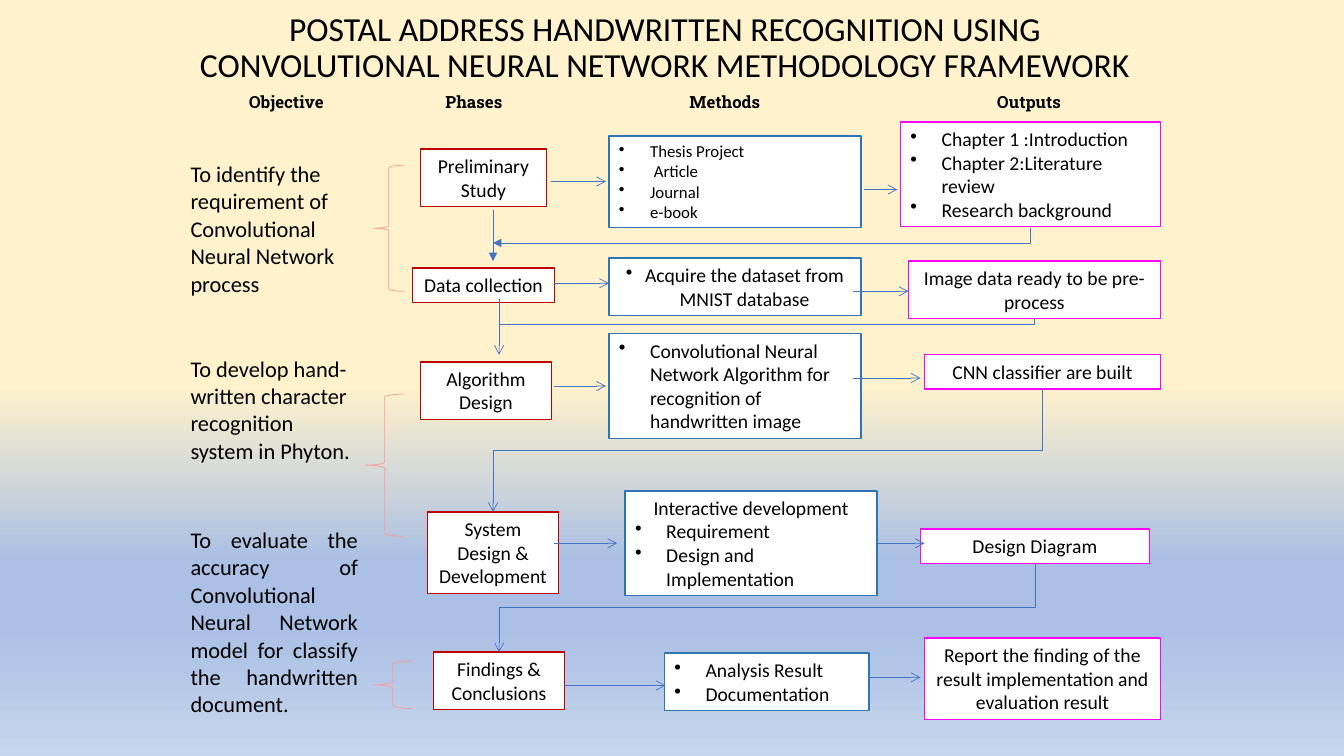
import pptx
import pptx.util
import pptx.dml.color
import pptx.enum.dml
import pptx.enum.shapes
import pptx.enum.text
import pptx.oxml
import pptx.oxml.ns

theme = {
    "ink": "000000", "paper": "FFFFFF", "phase": "C00000", "method": "2E75B6",
    "output": "FF00FF", "line": "4472C4", "brace": "FF9999",
    "sky": [(51, "FFF2CC"), (74, "ABC0E4"), (83, "ABC0E4"), (100, "C7D5ED")],
    "body": "Calibri", "slab": "Roboto Slab",
    "title": 24, "aim": 16, "card": 14, "small": 12, "edge": 1, "thin": 0.5,
}
unit = pptx.util.Inches(0.01)
wide, high = 1333, 750
rgb = pptx.dml.color.RGBColor.from_string
qn = pptx.oxml.ns.qn
side = pptx.enum.text.PP_ALIGN
kind = pptx.enum.shapes.MSO_SHAPE
link = pptx.enum.shapes.MSO_CONNECTOR


def write(frame, lines, size, align, hang=31, font=theme["body"], bold=False):
    frame.word_wrap = True
    frame.vertical_anchor = pptx.enum.text.MSO_ANCHOR.TOP
    for i, line in enumerate(lines):
        para = frame.paragraphs[0] if i == 0 else frame.add_paragraph()
        para.text = line.removeprefix("•")
        para.alignment = align
        if line.startswith("•"):
            para.alignment = side.LEFT if hang == 31 else align
            prop = para._p.get_or_add_pPr()
            prop.set("marL", str(hang * unit))
            prop.set("indent", str(-hang * unit))
            prop.append(pptx.oxml.parse_xml(
                '<a:buChar xmlns:a="http://schemas.openxmlformats.org/drawingml/2006/main" char="•"/>'))
        for run in para.runs:
            run.font.size = pptx.util.Pt(size)
            run.font.name = font
            run.font.bold = bold
            run.font.color.rgb = rgb(theme["ink"])


def join(form, ends, head):
    wire = slide.shapes.add_connector(form, *[n * unit for n in ends])
    wire.line.color.rgb = rgb(theme["line"])
    wire.line.width = pptx.util.Pt(theme["thin"])
    prop = wire._element.spPr
    if head:
        tail = wire.line._get_or_add_ln().makeelement(qn("a:tailEnd"), {"type": head})
        wire.line._get_or_add_ln().append(tail)
    prop.append(prop.makeelement(qn("a:effectLst"), {}))
    return wire


deck = pptx.Presentation()
deck.slide_width, deck.slide_height = wide * unit, high * unit
slide = deck.slides.add_slide(deck.slide_layouts[6])

back = slide.background.fill
back.gradient()
back.gradient_angle = 270
stops = slide.element.find(".//" + qn("a:gsLst"))
for old in list(stops):
    stops.remove(old)
for share, tint in theme["sky"]:
    stop = stops.makeelement(qn("a:gs"), {"pos": str(share * 1000)})
    stop.append(stop.makeelement(qn("a:srgbClr"), {"val": tint}))
    stops.append(stop)

aims = [
    (215, 74, side.LEFT, "To identify the requirement of Convolutional Neural Network process"),
    (166, 52, side.LEFT, "To develop hand-written character recognition system in Phyton."),
    (250, 56, side.JUSTIFY, "To evaluate the accuracy of Convolutional Neural Network model for classify the handwritten document."),
    (33, 0, side.LEFT, ""),
]
spans = [180, 453, 352]
tall = sum(aim[0] for aim in aims)
grid = slide.shapes.add_table(len(aims), len(spans), 182 * unit, 86 * unit,
                              sum(spans) * unit, tall * unit)
table = grid.table
table.first_row = table.horz_banding = False
style = table._tbl.tblPr.find(qn("a:tableStyleId"))
style.text = "{2D5ABB26-0587-4C30-8999-92F81FD0307C}"
for col, span in zip(table.columns, spans):
    col.width = span * unit
for row, (size, gap, align, text) in zip(table.rows, aims):
    row.height = size * unit
    for cell in row.cells:
        cell.fill.background()
        cell.margin_left = cell.margin_right = 7 * unit
        cell.margin_top = cell.margin_bottom = 0
    if text:
        row.cells[0].margin_top = gap * unit
        write(row.cells[0].text_frame, [text], theme["aim"], align)
for i in (1, 2):
    table.cell(1, i).merge(table.cell(2, i))

for x, w, text in [(237, 124, "Objective"), (432, 124, "Phases"),
                   (674, 110, "Methods"), (979, 110, "Outputs")]:
    label = slide.shapes.add_textbox(x * unit, 86 * unit, w * unit, 30 * unit)
    write(label.text_frame, [text], theme["small"], side.LEFT,
          font=theme["slab"], bold=True)

cards = {
    "phase": [
        (417, 148, 125, 57, ["Preliminary Study"]),
        (409, 266, 141, 34, ["Data collection"]),
        (417, 359, 130, 57, ["Algorithm Design"]),
        (424, 508, 130, 81, ["System Design & Development"]),
        (430, 647, 130, 57, ["Findings & Conclusions"]),
    ],
    "method": [
        (604, 135, 250, 91, ["•Thesis Project", "• Article", "•Journal", "•e-book"]),
        (604, 256, 250, 57, ["•Acquire the dataset from MNIST database"]),
        (604, 331, 250, 104, ["•Convolutional Neural Network Algorithm for recognition of handwritten image"]),
        (620, 487, 250, 104, ["Interactive development", "•Requirement", "•Design and Implementation"]),
        (659, 648, 203, 57, ["•Analysis Result", "•Documentation"]),
    ],
    "output": [
        (893, 121, 258, 104, ["•Chapter 1 :Introduction", "•Chapter 2:Literature review", "•Research background"]),
        (901, 259, 250, 57, ["Image data ready to be pre-process"]),
        (917, 352, 234, 34, ["CNN classifier are built"]),
        (913, 525, 227, 34, ["Design Diagram"]),
        (917, 633, 234, 81, ["Report the finding of the result implementation and evaluation result"]),
    ],
}
for role, group in cards.items():
    for i, (x, y, w, h, lines) in enumerate(group):
        card = slide.shapes.add_shape(kind.RECTANGLE, x * unit, y * unit, w * unit, h * unit)
        card.shadow.inherit = False
        card.fill.solid()
        card.fill.fore_color.rgb = rgb(theme["paper"])
        card.line.color.rgb = rgb(theme[role])
        card.line.width = pptx.util.Pt(theme["edge"])
        size = theme["small"] if (role, i) == ("method", 0) else theme["card"]
        hang = 19 if (role, i) == ("method", 1) else 31
        write(card.text_frame, lines, size, side.CENTER, hang)

for x, end, y in [(547, 601, 180), (857, 890, 188), (549, 604, 281), (846, 901, 289),
                  (549, 601, 383), (846, 913, 375), (549, 612, 539), (870, 917, 539),
                  (559, 660, 680), (862, 913, 672)]:
    join(link.STRAIGHT, (x, y, end, y), "arrow")
for x, y, end, head in [(489, 208, 259, "triangle"), (495, 297, 352, "arrow")]:
    join(link.STRAIGHT, (x, y, x, end), head)

for x, y, left, end, form, head in [
        (1022, 226, 489, 241, "bentConnector2", "triangle"),
        (1026, 316, 495, 322, "bentConnector2", None),
        (1034, 385, 489, 508, "bentConnector3", "arrow"),
        (1027, 559, 495, 647, "bentConnector3", "arrow")]:
    run, drop = x - left, end - y
    midx, midy = (x + left) / 2, (y + end) / 2
    ends = (midx - drop / 2, midy - run / 2, midx + drop / 2, midy + run / 2)
    bend = join(link.ELBOW, [round(n, 1) for n in ends], head)
    bend._element.spPr.find(qn("a:prstGeom")).set("prst", form)
    bend._element.spPr.find(qn("a:xfrm")).set("rot", str(90 * 60000))

for x, y, w, h in [(370, 164, 31, 125), (362, 391, 39, 141), (370, 656, 39, 47)]:
    brace = slide.shapes.add_shape(kind.LEFT_BRACE, x * unit, y * unit, w * unit, h * unit)
    brace.shadow.inherit = False
    brace.fill.background()
    brace.line.color.rgb = rgb(theme["brace"])
    brace.line.width = pptx.util.Pt(theme["thin"])

title = slide.shapes.add_textbox(158 * unit, 7 * unit, 1003 * unit, 65 * unit)
write(title.text_frame, ["POSTAL ADDRESS HANDWRITTEN RECOGNITION USING CONVOLUTIONAL NEURAL NETWORK METHODOLOGY FRAMEWORK"],
      theme["title"], side.CENTER)
title.text_frame.paragraphs[0].line_spacing = 0.9

deck.save("out.pptx")
